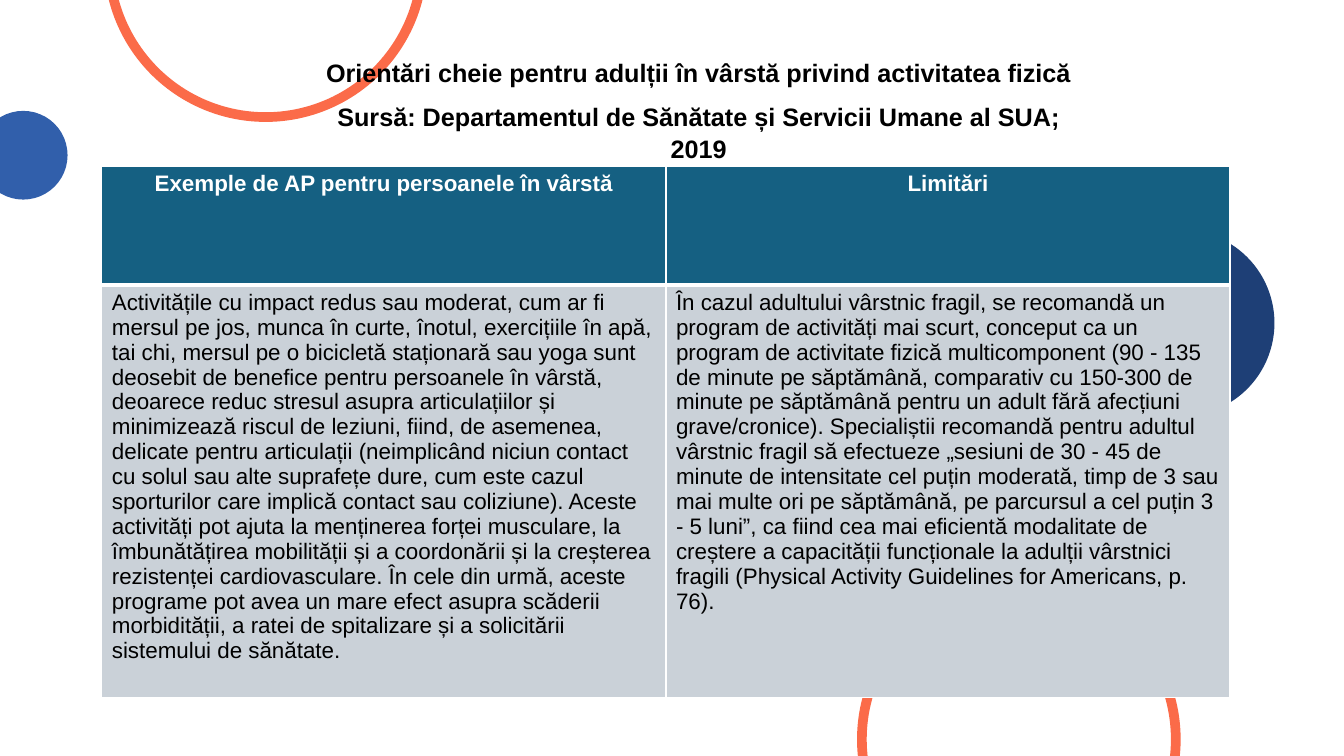
import pptx
import pptx.util
import pptx.dml.color
import pptx.enum.shapes
import pptx.enum.text
import pptx.oxml
import pptx.oxml.ns

WIDE, HIGH = 13.33, 7.5
TITLE = [
    "Orientări cheie pentru adulții în vârstă privind activitatea fizică",
    "Sursă: Departamentul de Sănătate și Servicii Umane al SUA; 2019",
]
ROWS = [
    ("Exemple de AP pentru persoanele în vârstă", "Limitări"),
    (
        "Activitățile cu impact redus sau moderat, cum ar fi mersul pe jos, munca în curte, "
        "înotul, exercițiile în apă, tai chi, mersul pe o bicicletă staționară sau yoga sunt "
        "deosebit de benefice pentru persoanele în vârstă, deoarece reduc stresul asupra "
        "articulațiilor și minimizează riscul de leziuni, fiind, de asemenea, delicate pentru "
        "articulații (neimplicând niciun contact cu solul sau alte suprafețe dure, cum este "
        "cazul sporturilor care implică contact sau coliziune). Aceste activități pot ajuta la "
        "menținerea forței musculare, la îmbunătățirea mobilității și a coordonării și la "
        "creșterea rezistenței cardiovasculare. În cele din urmă, aceste programe pot avea un "
        "mare efect asupra scăderii morbidității, a ratei de spitalizare și a solicitării "
        "sistemului de sănătate.",
        "În cazul adultului vârstnic fragil, se recomandă un program de activități mai scurt, "
        "conceput ca un program de activitate fizică multicomponent (90 - 135 de minute pe "
        "săptămână, comparativ cu 150-300 de minute pe săptămână pentru un adult fără afecțiuni "
        "grave/cronice). Specialiștii recomandă pentru adultul vârstnic fragil să efectueze "
        "„sesiuni de 30 - 45 de minute de intensitate cel puțin moderată, timp de 3 sau mai "
        "multe ori pe săptămână, pe parcursul a cel puțin 3 - 5 luni”, ca fiind cea mai "
        "eficientă modalitate de creștere a capacității funcționale la adulții vârstnici "
        "fragili (Physical Activity Guidelines for Americans, p. 76).",
    ),
]
LOOKS = [("156082", "FFFFFF", True, 3), ("CAD1D8", "000000", False, 1)]
TALL = [1.18, 4.09]
DISCS = [(10.79, 2.28, 1.85, "1E3F76"), (-0.21, 1.1, 0.88, "315FAB")]
RINGS = [(8.5, 5.73, 3.21, "FB6B49"), (1.03, -2, 3.21, "FB6B49")]
BAND = 0.03

inch = pptx.util.Inches
kinds = pptx.enum.shapes.MSO_SHAPE
align = pptx.enum.text.PP_ALIGN


def tint(code):
    return pptx.dml.color.RGBColor.from_string(code)


def style(para, size, code, bold):
    for run in para.runs:
        run.font.name = "Arial"
        run.font.size = pptx.util.Pt(size)
        run.font.bold = bold
        run.font.color.rgb = tint(code)


def round_shape(slide, kind, spot):
    left, top, size, code = spot
    shape = slide.shapes.add_shape(kind, inch(left), inch(top), inch(size), inch(size))
    shape.shadow.inherit = False
    shape.fill.solid()
    shape.fill.fore_color.rgb = tint(code)
    shape.line.fill.background()
    return shape


def edge(cell, sides):
    props = cell._tc.get_or_add_tcPr()
    for spot, (side, width) in enumerate(sides.items()):
        props.insert(spot, pptx.oxml.parse_xml(
            f'<a:{side} {pptx.oxml.ns.nsdecls("a")} w="{width * 12700}">'
            f'<a:solidFill><a:srgbClr val="FFFFFF"/></a:solidFill></a:{side}>'))


def add_title(slide):
    title = slide.shapes.title
    title.left, title.top = inch(3.08), inch(0.5)
    title.width, title.height = inch(7.7), inch(1.5)
    frame = title.text_frame
    frame.text = "\n".join(TITLE)
    frame.word_wrap = True
    frame.auto_size = pptx.enum.text.MSO_AUTO_SIZE.NONE
    frame.vertical_anchor = pptx.enum.text.MSO_ANCHOR.TOP
    for spot, para in enumerate(frame.paragraphs):
        para.alignment = align.CENTER
        para.line_spacing = 1.07
        para.space_before = pptx.util.Pt(8 * spot)
        style(para, 18, "000000", True)
    title.element.getparent().append(title.element)


def add_grid(slide):
    grid = slide.shapes.add_table(
        len(ROWS), len(ROWS[0]), inch(1.01), inch(1.65), inch(11.19), inch(sum(TALL))).table
    for row, texts in enumerate(ROWS):
        fill, ink, head, base = LOOKS[row]
        grid.rows[row].height = inch(TALL[row])
        for col, text in enumerate(texts):
            cell = grid.cell(row, col)
            cell.text = text
            cell.fill.solid()
            cell.fill.fore_color.rgb = tint(fill)
            para = cell.text_frame.paragraphs[0]
            para.alignment = align.CENTER if head else align.LEFT
            style(para, 16, ink, head)
            edge(cell, {"lnL": 1, "lnR": 1, "lnT": LOOKS[row - 1][3] if row else 1, "lnB": base})


def main():
    deck = pptx.Presentation()
    deck.slide_width, deck.slide_height = inch(WIDE), inch(HIGH)
    slide = deck.slides.add_slide(deck.slide_layouts[5])
    slide.background.fill.solid()
    slide.background.fill.fore_color.rgb = tint("FFFFFF")
    for spot in DISCS:
        round_shape(slide, kinds.OVAL, spot)
    for spot in RINGS:
        round_shape(slide, kinds.DONUT, spot).adjustments[0] = BAND
    add_title(slide)
    add_grid(slide)
    deck.save("out.pptx")


if __name__ == "__main__":
    main()
